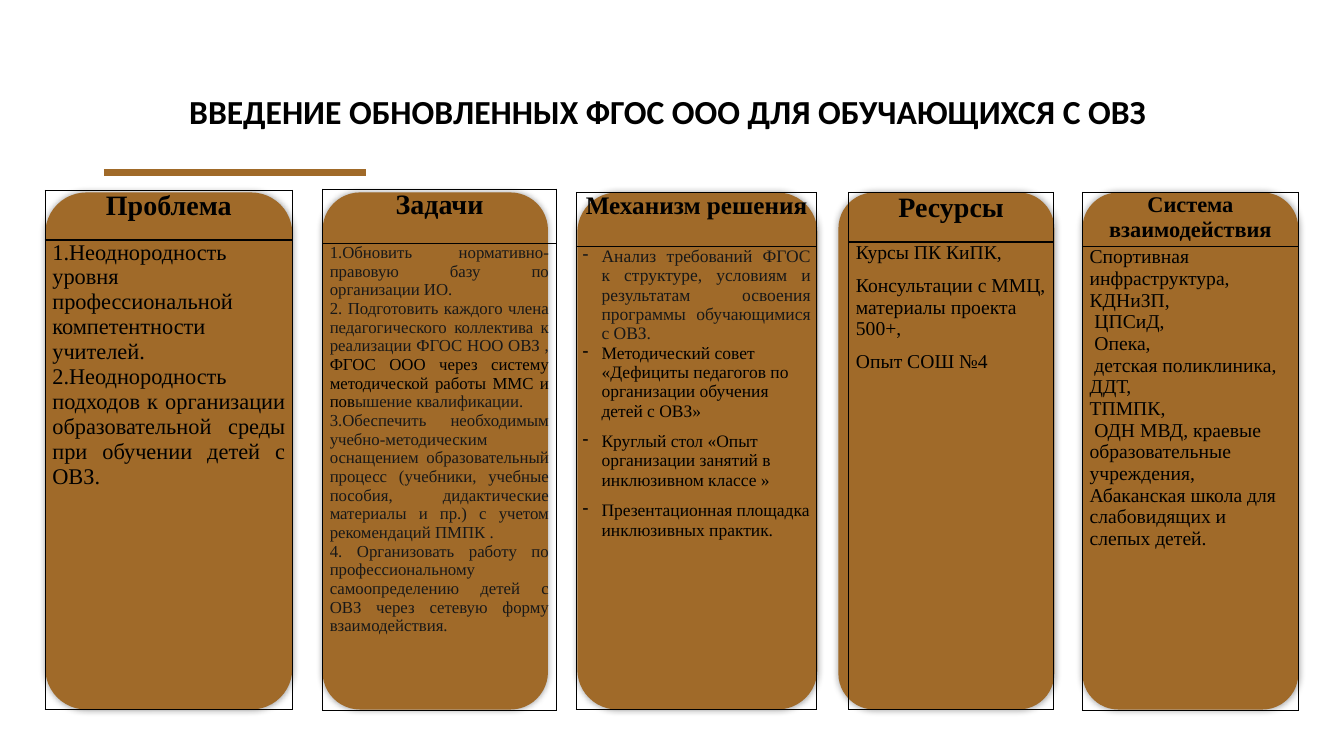
from dataclasses import dataclass

from lxml import etree
from pptx import Presentation
from pptx.dml.color import RGBColor
from pptx.enum.shapes import MSO_CONNECTOR, MSO_SHAPE
from pptx.enum.text import MSO_ANCHOR, PP_ALIGN as Align
from pptx.oxml.ns import qn
from pptx.util import Cm, Pt

COLORS = {"brown": "A06A29", "black": "000000", "dark": "181818"}
BODY_FONT = "Times New Roman"
CARD_TOP, CARD_HEIGHT = 4.85, 13.03


@dataclass
class Item:
    """One paragraph; runs are (text, color name) pairs."""
    runs: list
    align: Align = Align.LEFT
    after: float = 0
    indent: float = 0
    bullet: bool = False


@dataclass
class Column:
    """Lengths in cm; card and table are (left, width) pairs."""
    card: tuple
    table: tuple
    top: float
    rows: tuple
    heading: str
    heading_size: float
    size: float
    items: list
    margin: float = 0.18


def plain(text, **options):
    return Item([(text, "black")], **options)


def dark(text, **options):
    return Item([(text, "dark")], align=Align.JUSTIFY, **options)


def bullet(text):
    return plain(text, bullet=True, after=8)


COLUMNS = [
    Column((1.14, 6.23), (1.14, 6.23), 4.8, (1.25, 11.83), "Проблема", 20, 16, [
        plain("1.Неоднородность уровня профессиональной компетентности учителей.",
              align=Align.JUSTIFY),
        plain("2.Неоднородность подходов к организации образовательной среды "
              "при обучении детей с ОВЗ.", align=Align.JUSTIFY),
    ]),
    Column((8.13, 5.68), (8.13, 5.89), 4.77, (1.37, 11.76), "Задачи", 20, 12, [
        dark("1.Обновить нормативно-правовую базу по организации ИО."),
        Item([("2. Подготовить каждого члена педагогического коллектива "
               "к реализации ФГОС НОО ОВЗ , ", "dark"),
              ("ФГОС ООО через систему методической работы ММС и пов", "black"),
              ("ышение квалификации.", "dark")], align=Align.JUSTIFY),
        dark("3.Обеспечить необходимым учебно-методическим оснащением "
             "образовательный процесс (учебники, учебные пособия, дидактические "
             "материалы и пр.) с учетом рекомендаций ПМПК ."),
        dark("4. Организовать работу по профессиональному самоопределению "
             "детей с ОВЗ через сетевую форму взаимодействия."),
    ]),
    Column((14.55, 6.05), (14.53, 6.05), 4.85, (1.37, 11.66),
           "Механизм решения", 18, 12.5, [
        dark("Анализ требований ФГОС к структуре, условиям и результатам "
             "освоения программы обучающимися с ОВЗ.", bullet=True),
        bullet("Методический совет «Дефициты педагогов по организации "
               "обучения детей с ОВЗ»"),
        bullet("Круглый стол «Опыт организации занятий в инклюзивном классе »"),
        bullet("Презентационная площадка инклюзивных практик."),
    ], margin=0.15),
    Column((21.13, 5.44), (21.39, 5.16), 4.85, (1.25, 11.78), "Ресурсы", 20, 14, [
        plain("Курсы ПК КиПК,", after=8),
        plain("Консультации с ММЦ, материалы проекта 500+,", after=8),
        plain("Опыт СОШ №4", after=8),
    ]),
    Column((27.28, 5.44), (27.28, 5.44), 4.85, (1.35, 11.7),
           "Система взаимодействия", 16, 14, [
        plain("Спортивная инфраструктура, КДНиЗП,"),
        plain("ЦПСиД,", indent=0.12),
        plain("Опека,", indent=0.12),
        plain("детская поликлиника, ДДТ,", indent=0.12),
        plain("ТПМПК,"),
        plain("ОДН МВД, краевые образовательные учреждения, Абаканская школа "
              "для слабовидящих и слепых детей.", indent=0.12),
    ]),
]


def color(name):
    return RGBColor.from_string(COLORS[name])


def style(run, size, color_name, font=BODY_FONT, bold=False):
    run.font.name, run.font.size, run.font.bold = font, Pt(size), bold
    run.font.color.rgb = color(color_name)


def add_title(slide, left, top, width, height):
    box = slide.shapes.add_textbox(Cm(left), Cm(top), Cm(width), Cm(height))
    frame = box.text_frame
    frame.word_wrap = True
    frame.vertical_anchor = MSO_ANCHOR.MIDDLE
    frame.text = "ВВЕДЕНИЕ ОБНОВЛЕННЫХ ФГОС ООО ДЛЯ ОБУЧАЮЩИХСЯ С ОВЗ"
    frame.paragraphs[0].line_spacing = 0.9
    style(frame.paragraphs[0].runs[0], 24, "black", "Calibri", True)


def add_accent(slide, left, top, width):
    line = slide.shapes.add_connector(
        MSO_CONNECTOR.STRAIGHT, Cm(left), Cm(top), Cm(left + width), Cm(top))
    line.line.color.rgb = color("brown")
    line.line.width = Pt(5)
    etree.SubElement(line._element.spPr, qn("a:effectLst"))


def add_card(slide, left, top, width, height):
    """Rounded card with a soft glow-like shadow."""
    card = slide.shapes.add_shape(
        MSO_SHAPE.ROUNDED_RECTANGLE, Cm(left), Cm(top), Cm(width), Cm(height))
    card.fill.solid()
    card.fill.fore_color.rgb = color("brown")
    card.line.fill.background()
    card.shadow.inherit = False
    effects = card._element.spPr.find(qn("a:effectLst"))
    shadow = etree.SubElement(effects, qn("a:outerShdw"), blurRad=str(Pt(5)), dist="0")
    tint = etree.SubElement(shadow, qn("a:srgbClr"), val=COLORS["black"])
    etree.SubElement(tint, qn("a:alpha"), val="40000")


def outline(cell):
    properties = cell._tc.get_or_add_tcPr()
    for side in ("lnL", "lnR", "lnT", "lnB"):
        border = etree.SubElement(properties, qn(f"a:{side}"), w=str(Pt(1)))
        fill = etree.SubElement(border, qn("a:solidFill"))
        etree.SubElement(fill, qn("a:srgbClr"), val=COLORS["black"])
    cell.fill.background()


def write_item(paragraph, item, size, bold=False):
    paragraph.alignment = item.align
    paragraph.space_after = Pt(item.after)
    properties = paragraph._p.get_or_add_pPr()
    if item.bullet:
        properties.set("marL", str(Cm(0.48)))
        properties.set("indent", str(-Cm(0.48)))
        etree.SubElement(properties, qn("a:buChar"), char="-")
    elif item.indent:
        properties.set("indent", str(Cm(item.indent)))
    for text, color_name in item.runs:
        run = paragraph.add_run()
        run.text = text
        style(run, size, color_name, bold=bold)


def add_column(slide, column):
    """Card with a two-row table, heading and body, on top of it."""
    add_card(slide, column.card[0], CARD_TOP, column.card[1], CARD_HEIGHT)
    left, width = column.table
    table = slide.shapes.add_table(
        2, 1, Cm(left), Cm(column.top), Cm(width), Cm(sum(column.rows))).table
    table.first_row = table.horz_banding = False
    for row, height in zip(table.rows, column.rows):
        row.height = Cm(height)
        cell = row.cells[0]
        cell.margin_left = cell.margin_right = Cm(column.margin)
        cell.margin_top = cell.margin_bottom = 0
        outline(cell)
    heading = table.cell(0, 0).text_frame.paragraphs[0]
    write_item(heading, plain(column.heading, align=Align.CENTER),
               column.heading_size, bold=True)
    body = table.cell(1, 0).text_frame
    for index, item in enumerate(column.items):
        paragraph = body.add_paragraph() if index else body.paragraphs[0]
        write_item(paragraph, item, column.size)


def main():
    presentation = Presentation()
    presentation.slide_width, presentation.slide_height = Cm(33.87), Cm(19.05)
    slide = presentation.slides.add_slide(presentation.slide_layouts[6])
    add_title(slide, 4.52, 1.02, 27.03, 3.68)
    add_accent(slide, 2.62, 4.35, 6.6)
    for column in COLUMNS:
        add_column(slide, column)
    presentation.save("out.pptx")


if __name__ == "__main__":
    main()
